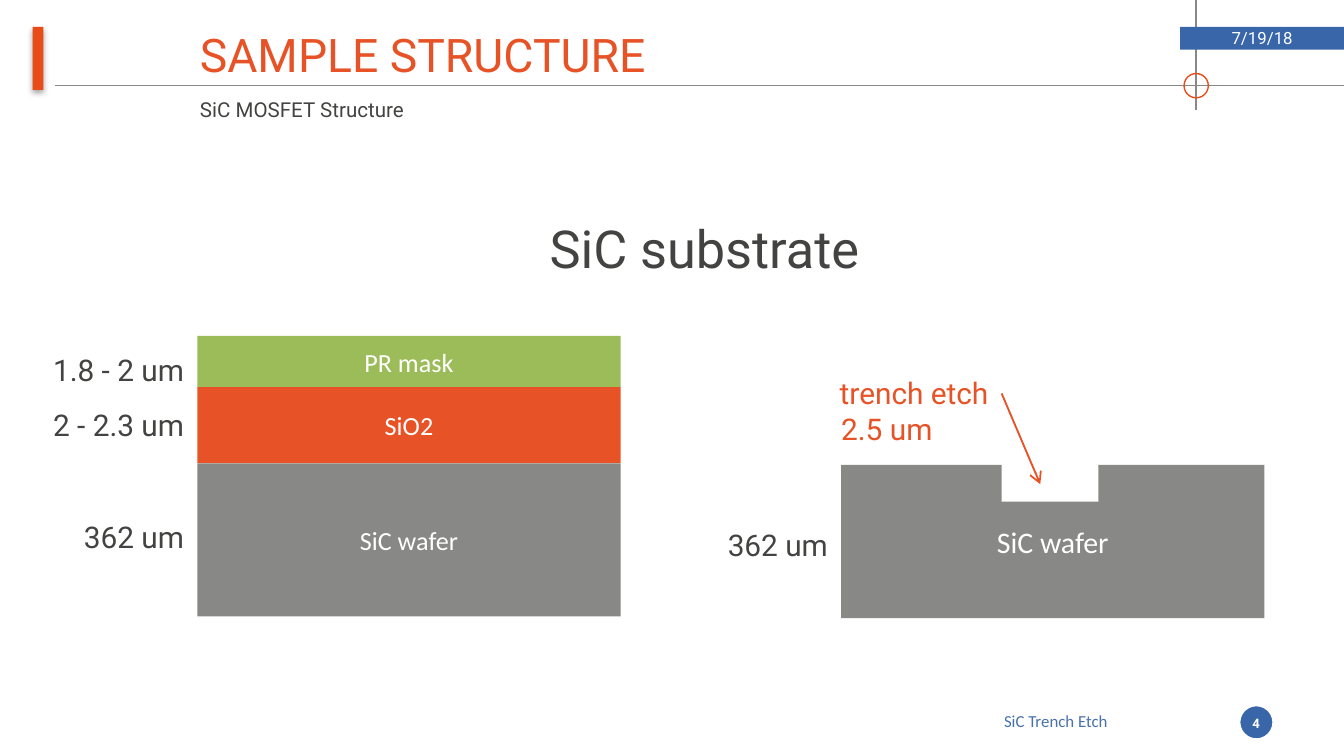
from dataclasses import dataclass
from typing import Optional

from lxml import etree
from pptx import Presentation
from pptx import util as u
from pptx.dml.color import RGBColor
from pptx.enum import shapes, text
from pptx.oxml import ns

ORANGE = RGBColor(0xE7, 0x53, 0x26)
ACCENT = RGBColor(0xE7, 0x4D, 0x18)
BLUE = RGBColor(0x38, 0x66, 0xA8)
FOOTER_BLUE = RGBColor(0x49, 0x72, 0xAB)
GRAY = RGBColor(0x88, 0x88, 0x86)
GREEN = RGBColor(0x9B, 0xBC, 0x58)
DARK = RGBColor(0x43, 0x43, 0x42)
WHITE = RGBColor(0xFF, 0xFF, 0xFF)

RECTANGLE = shapes.MSO_SHAPE.RECTANGLE
OVAL = shapes.MSO_SHAPE.OVAL
LEFT, CENTER, RIGHT = text.PP_ALIGN.LEFT, text.PP_ALIGN.CENTER, text.PP_ALIGN.RIGHT
TOP, MIDDLE = text.MSO_ANCHOR.TOP, text.MSO_ANCHOR.MIDDLE


@dataclass
class Box:
    left: float
    top: float
    width: float
    height: float

    def lengths(self):
        return [u.Pt(n) for n in (self.left, self.top, self.width, self.height)]


@dataclass
class Label:
    words: str
    size: float
    color: RGBColor = DARK
    font: str = "Roboto"
    align: text.PP_ALIGN = CENTER
    anchor: text.MSO_ANCHOR = MIDDLE
    spacing: float = 1.0
    bold: bool = False


@dataclass
class Layer:
    name: str
    height: float
    color: RGBColor
    thickness: str
    thickness_top: float


def set_all(target, values: dict) -> None:
    for name, value in values.items():
        setattr(target, name, value)


def write(shape, label: Label) -> None:
    frame = shape.text_frame
    set_all(frame, {"word_wrap": True, "vertical_anchor": label.anchor})
    paragraph = frame.paragraphs[0]
    set_all(paragraph, {"text": label.words, "alignment": label.align,
                        "line_spacing": label.spacing})
    set_all(paragraph.runs[0].font, {"name": label.font, "size": u.Pt(label.size),
                                     "bold": label.bold})
    paragraph.runs[0].font.color.rgb = label.color


def add_text(slide, box: Box, label: Label) -> None:
    write(slide.shapes.add_textbox(*box.lengths()), label)


def add_block(slide, box: Box, fill: Optional[RGBColor] = None,
              label: Optional[Label] = None, kind=RECTANGLE,
              line: Optional[RGBColor] = None, line_width: float = 0.75):
    shape = slide.shapes.add_shape(kind, *box.lengths())
    shape.shadow.inherit = False
    if fill is None:
        shape.fill.background()
    else:
        shape.fill.solid()
        shape.fill.fore_color.rgb = fill
    if line is None:
        shape.line.fill.background()
    else:
        shape.line.color.rgb = line
        shape.line.width = u.Pt(line_width)
    if label:
        write(shape, label)
    return shape


def add_line(slide, start, end, color: RGBColor, width: float, arrow=False) -> None:
    connector = slide.shapes.add_connector(
        shapes.MSO_CONNECTOR.STRAIGHT, *[u.Pt(n) for n in (*start, *end)])
    connector.line.color.rgb = color
    connector.line.width = u.Pt(width)
    if arrow:
        etree.SubElement(connector.line._get_or_add_ln(), ns.qn("a:tailEnd"), type="arrow")
    etree.SubElement(connector._element.spPr, ns.qn("a:effectLst"))


def add_soft_shadow(shape) -> None:
    effects = shape._element.spPr.find(ns.qn("a:effectLst"))
    shadow = etree.SubElement(effects, ns.qn("a:outerShdw"), blurRad=str(u.Pt(3.1)),
                              dist=str(u.Pt(1.8)), dir="5400000", rotWithShape="0")
    color = etree.SubElement(shadow, ns.qn("a:srgbClr"), val="000000")
    etree.SubElement(color, ns.qn("a:alpha"), val="35000")


def add_frame(slide) -> None:
    """Title, header rules, date and footer."""
    add_line(slide, (29.5, 45.8), (720, 45.8), GRAY, 0.75)
    add_line(slide, (640.8, 59), (640.8, 0), GRAY, 0.75)
    add_block(slide, Box(634.3, 39.4, 13, 13), kind=OVAL, line=ACCENT)
    add_soft_shadow(add_block(slide, Box(17.5, 14.4, 5.8, 33.8), ACCENT))
    add_block(slide, Box(663.4, 377.3, 19.4, 19.4), BLUE, kind=OVAL,
              line=WHITE, line_width=2.25)
    add_text(slide, Box(100, 10.1, 532, 37.4),
             Label("SAMPLE STRUCTURE", 24.8, ORANGE, align=LEFT))
    add_block(slide, Box(632.2, 14.4, 87.8, 12.2), BLUE, Label("7/19/18", 9, WHITE))
    add_block(slide, Box(490.3, 377.3, 150.5, 18), WHITE,
              Label("SiC Trench Etch", 9, FOOTER_BLUE, "Calibri"))
    add_text(slide, Box(661, 377.3, 23.8, 20.2), Label("4", 7, WHITE, bold=True))
    add_text(slide, Box(100, 48.2, 198.7, 20.2),
             Label("SiC MOSFET Structure", 11, align=LEFT, anchor=TOP))


def add_dimension(slide, right: float, top: float, words: str, color=DARK) -> None:
    """Label set right-aligned against the given edge."""
    width = 87.8
    add_text(slide, Box(right - width, top, width, 27.4),
             Label(words, 16, color, align=RIGHT, anchor=TOP, spacing=1.1))


LAYERS = [
    Layer("PR mask", 27.4, GREEN, "1.8 - 2 um", 182.9),
    Layer("SiO2", 40.8, ORANGE, "2 - 2.3 um", 212.4),
    Layer("SiC wafer", 82, GRAY, "362 um", 272.4),
]
WAFER_WIDTH = 226.8


def add_layer_stack(slide, left: float, top: float) -> None:
    for layer in LAYERS:
        add_block(slide, Box(left, top, WAFER_WIDTH, layer.height), layer.color,
                  Label(layer.name, 14, WHITE, "Calibri"))
        add_dimension(slide, left, layer.thickness_top, layer.thickness)
        top += layer.height


def add_etched_wafer(slide, left: float, top: float) -> None:
    add_block(slide, Box(left, top, WAFER_WIDTH, 82), GRAY,
              Label("SiC wafer", 16, WHITE, "Calibri"))
    add_block(slide, Box(536.6, 239, 51.8, 29.8), WHITE)
    add_text(slide, Box(342.9, 197.3, 193.7, 26.6),
             Label("trench etch", 16, ORANGE, align=RIGHT, anchor=TOP))
    add_line(slide, (536.6, 210.8), (557.3, 259.4), ORANGE, 1, arrow=True)
    add_dimension(slide, left, 276.9, "362 um")
    add_dimension(slide, 506.6, 214.6, "2.5 um", ORANGE)


def main() -> None:
    presentation = Presentation()
    set_all(presentation, {"slide_width": u.Pt(720), "slide_height": u.Pt(405)})
    slide = presentation.slides.add_slide(presentation.slide_layouts[6])
    add_frame(slide)
    add_text(slide, Box(113.8, 108.7, 527, 41.8),
             Label("SiC substrate", 28, anchor=TOP, spacing=1.1))
    add_layer_stack(slide, 105.7, 180)
    add_etched_wafer(slide, 450.6, 249.1)
    presentation.save("out.pptx")


if __name__ == "__main__":
    main()
